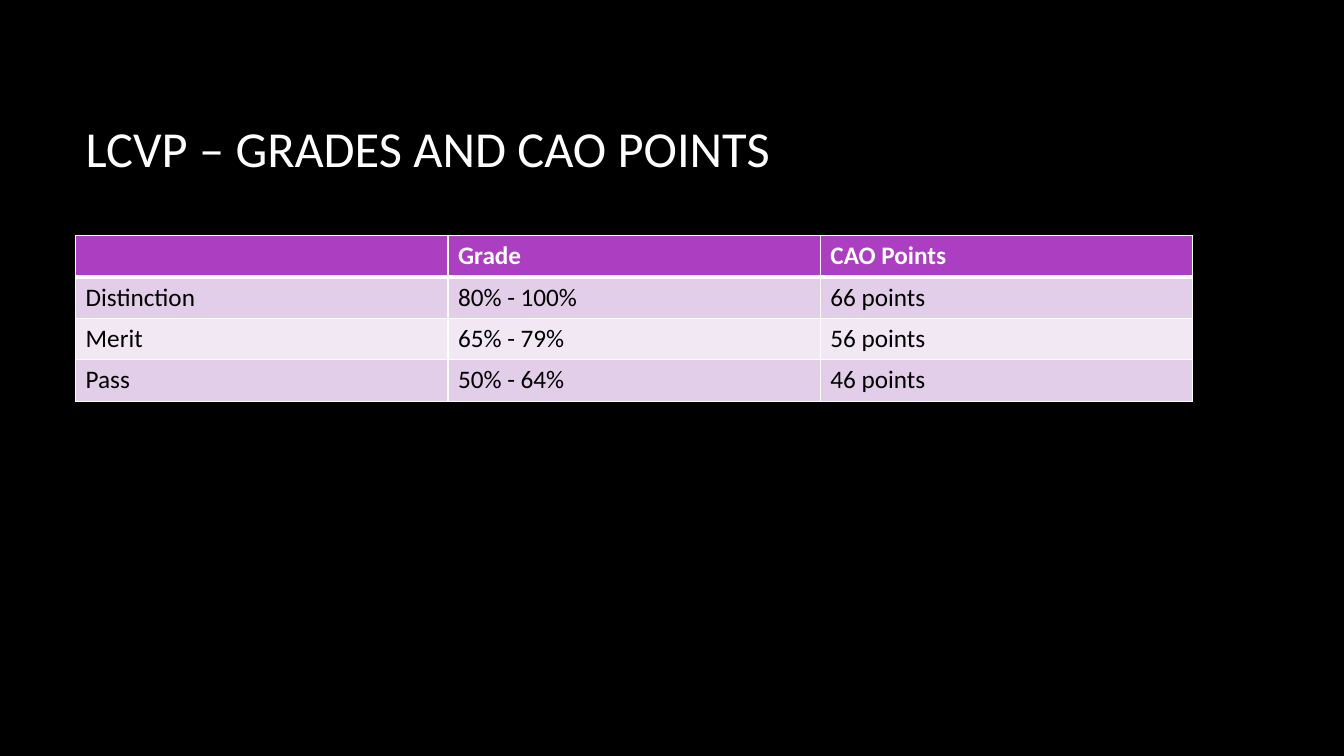
from dataclasses import dataclass

from lxml import etree
from pptx import Presentation
from pptx.dml.color import RGBColor
from pptx.enum.text import MSO_ANCHOR
from pptx.oxml.ns import qn
from pptx.slide import Slide
from pptx.table import _Cell
from pptx.text.text import TextFrame
from pptx.util import Inches, Pt

MIDDLE = MSO_ANCHOR.MIDDLE
TOP = MSO_ANCHOR.TOP


@dataclass(frozen=True)
class Theme:
    font: str = "Calibri"
    background: str = "000000"
    light: str = "FFFFFF"
    dark: str = "000000"
    header: str = "AC3EC1"
    bands: tuple[str, str] = ("E3CEE9", "F1E8F4")
    title_size: int = 36
    table_size: int = 18
    border: int = 1
    header_rule: int = 3


@dataclass(frozen=True)
class GradeRow:
    award: str
    grade: str
    points: str


THEME = Theme()
LEFT, WIDTH = 0.75, 11.08
ROW_HEIGHT = 0.41
GRADES = [
    GradeRow("", "Grade", "CAO Points"),
    GradeRow("Distinction", "80% - 100%", "66 points"),
    GradeRow("Merit", "65% - 79%", "56 points"),
    GradeRow("Pass", "50% - 64%", "46 points"),
]


def write(frame: TextFrame, text: str, *, size: int, color: str,
          bold: bool = False, anchor: MSO_ANCHOR = TOP) -> None:
    frame.word_wrap = True
    frame.vertical_anchor = anchor
    paragraph = frame.paragraphs[0]
    paragraph.font.size = Pt(size)
    if not text:
        return
    run = paragraph.add_run()
    run.text = text
    run.font.name = THEME.font
    run.font.size = Pt(size)
    run.font.bold = bold
    run.font.color.rgb = RGBColor.from_string(color)


def set_borders(cell: _Cell, top: int, bottom: int) -> None:
    properties = cell._tc.get_or_add_tcPr()
    widths = {"lnL": THEME.border, "lnR": THEME.border, "lnT": top, "lnB": bottom}
    for side, width in widths.items():
        line = etree.SubElement(properties, qn(f"a:{side}"), w=str(Pt(width)))
        fill = etree.SubElement(line, qn("a:solidFill"))
        etree.SubElement(fill, qn("a:srgbClr"), val=THEME.light)


def add_title(slide: Slide, text: str) -> None:
    title = slide.shapes.add_textbox(
        Inches(LEFT), Inches(0.67), Inches(WIDTH), Inches(1.59))
    write(title.text_frame, text, size=THEME.title_size,
          color=THEME.light, anchor=MIDDLE)


def add_grades(slide: Slide, grades: list[GradeRow]) -> None:
    columns = 3
    table = slide.shapes.add_table(
        len(grades), columns, Inches(LEFT), Inches(2.34),
        Inches(WIDTH), Inches(ROW_HEIGHT * len(grades))).table
    for column in table.columns:
        column.width = Inches(WIDTH / columns)
    for index, grade in enumerate(grades):
        table.rows[index].height = Inches(ROW_HEIGHT)
        is_header = index == 0
        background = THEME.header if is_header else THEME.bands[(index - 1) % 2]
        top = THEME.header_rule if index == 1 else THEME.border
        bottom = THEME.header_rule if is_header else THEME.border
        values = (grade.award, grade.grade, grade.points)
        for cell, value in zip(table.rows[index].cells, values):
            set_borders(cell, top, bottom)
            cell.fill.solid()
            cell.fill.fore_color.rgb = RGBColor.from_string(background)
            write(cell.text_frame, value, size=THEME.table_size, bold=is_header,
                  color=THEME.light if is_header else THEME.dark)


def main() -> None:
    presentation = Presentation()
    presentation.slide_width = Inches(13.33)
    presentation.slide_height = Inches(7.5)
    slide = presentation.slides.add_slide(presentation.slide_layouts[6])
    slide.background.fill.solid()
    slide.background.fill.fore_color.rgb = RGBColor.from_string(THEME.background)
    add_title(slide, "LCVP – GRADES AND CAO POINTS")
    add_grades(slide, GRADES)
    presentation.save("out.pptx")


if __name__ == "__main__":
    main()
